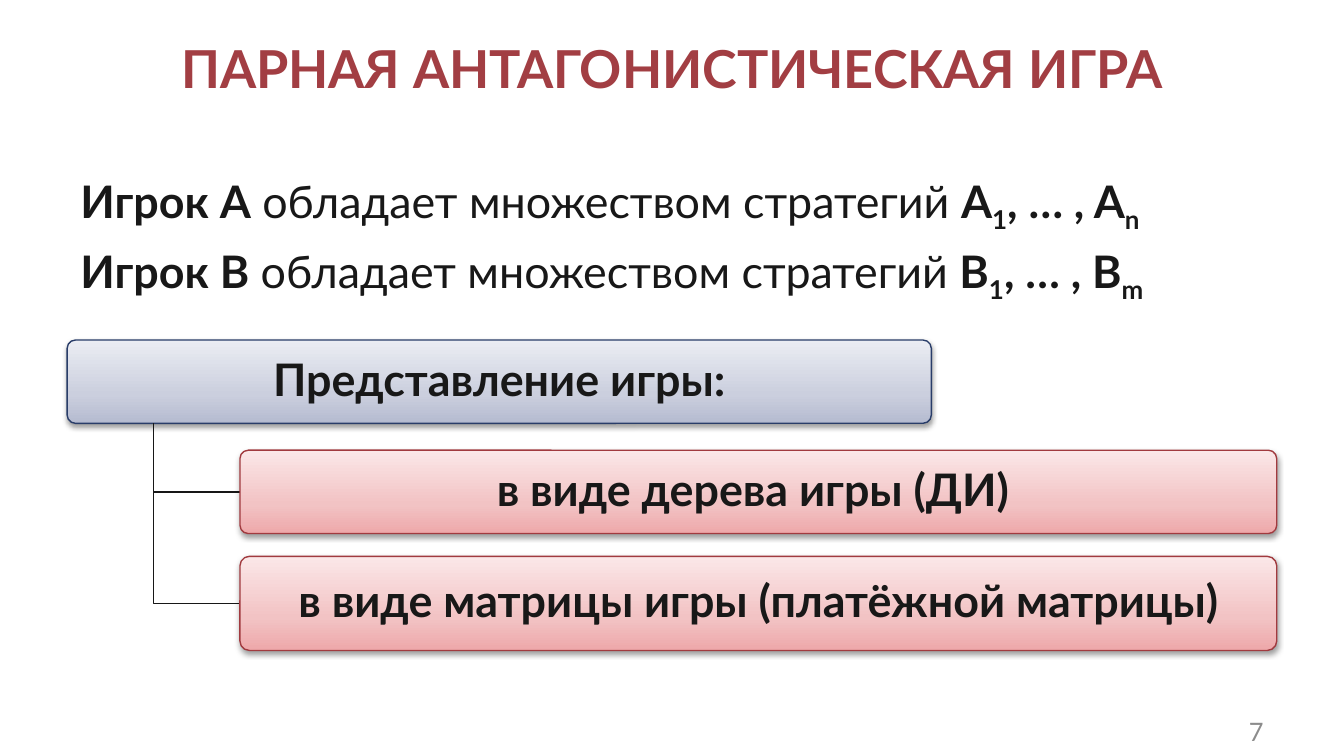
from dataclasses import dataclass
from lxml import etree
from pptx import Presentation
from pptx.dml.color import RGBColor
from pptx.enum.shapes import MSO_SHAPE
from pptx.enum.text import MSO_ANCHOR, PP_ALIGN
from pptx.oxml import parse_xml
from pptx.oxml.ns import nsdecls, qn
from pptx.util import Inches, Pt


@dataclass(frozen=True)
class Theme:
    font: str = "Lato"
    title: str = "A23E43"
    ink: str = "181818"
    gray: str = "8C8C8C"
    rule: str = "171717"
    # Outline, then the gradient stops from bottom to top
    blue: tuple = ("293D69", "B5BBD0", "CBCFDE", "EBEDF3")
    red: tuple = ("A13A3F", "EEA8AA", "F2C3C4", "FBE7E8")
    big: float = 28
    body: float = 24
    small: float = 13.6
    line: float = 0.75


T = Theme()


def add_run(para, text, size, color, bold=False, sub=False):
    run = para.add_run()
    run.text = text
    font = run.font
    font.name, font.size, font.bold = T.font, Pt(size), bold
    font.color.rgb = RGBColor.from_string(color)
    if sub:
        run._r.get_or_add_rPr().set("baseline", "-25000")


def add_text(slide, box, anchor):
    frame = slide.shapes.add_textbox(*map(Inches, box)).text_frame
    frame.word_wrap = True
    frame.vertical_anchor = anchor
    return frame


def add_label(slide, box, text, size, color, align, bold=False):
    para = add_text(slide, box, MSO_ANCHOR.MIDDLE).paragraphs[0]
    para.alignment = align
    add_run(para, text, size, color, bold)


def add_body(slide, box):
    frame = add_text(slide, box, MSO_ANCHOR.TOP)
    for i, (name, last) in enumerate((("A", "n"), ("B", "m"))):
        para = frame.add_paragraph() if i else frame.paragraphs[0]
        if i:
            para.space_before = Pt(4.8)
        for text, bold, sub in (
            (f"Игрок {name}", True, False),
            (" обладает множеством стратегий ", False, False),
            (name, True, False),
            ("1", True, True),
            (f", … , {name}", True, False),
            (last, True, True),
        ):
            add_run(para, text, T.body, T.ink, bold, sub)


def add_card(slide, box, text, tone):
    card = slide.shapes.add_shape(MSO_SHAPE.ROUNDED_RECTANGLE, *map(Inches, box))
    card.adjustments[0] = 0.1
    edge, *stops = tone
    card.line.color.rgb = RGBColor.from_string(edge)
    card.line.width = Pt(T.line)

    # Upward gradient
    props = card._element.spPr
    marks = "".join(
        f'<a:gs pos="{pos}000"><a:srgbClr val="{color}"/></a:gs>'
        for pos, color in zip((0, 35, 100), stops)
    )
    props.find(qn("a:prstGeom")).addnext(parse_xml(
        f'<a:gradFill {nsdecls("a")} rotWithShape="1"><a:gsLst>{marks}</a:gsLst>'
        '<a:lin ang="16200000" scaled="0"/></a:gradFill>'
    ))

    # Soft shadow below
    card.shadow.inherit = False
    shade = etree.SubElement(
        props.find(qn("a:effectLst")), qn("a:outerShdw"),
        blurRad=str(Pt(3.1)), dist=str(Pt(1.6)), dir="5400000", rotWithShape="0",
    )
    color = etree.SubElement(shade, qn("a:srgbClr"), val="000000")
    etree.SubElement(color, qn("a:alpha"), val="38000")

    frame = card.text_frame
    frame.word_wrap = True
    frame.vertical_anchor = MSO_ANCHOR.MIDDLE
    frame.margin_left = frame.margin_right = Inches(0.05)
    frame.margin_top = frame.margin_bottom = Inches(0.03)
    para = frame.paragraphs[0]
    para.alignment = PP_ALIGN.CENTER
    para.line_spacing = 0.9
    add_run(para, text, T.body, T.ink, True)


def add_elbow(slide, x, y, right, down):
    pen = slide.shapes.build_freeform(Inches(x), Inches(y))
    pen.add_line_segments(
        [(Inches(x), Inches(down)), (Inches(right), Inches(down))], close=False
    )
    elbow = pen.convert_to_shape()
    elbow.fill.background()
    elbow.shadow.inherit = False
    elbow.line.color.rgb = RGBColor.from_string(T.rule)
    elbow.line.width = Pt(T.line)


def add_tree(slide, box):
    x, y, w, h = box
    head, tall = 6.43, 0.62
    stem, left = x + head * 0.1, x + head * 0.2
    add_card(slide, (x, y, head, tall), "Представление игры:", T.blue)
    for text, drop, high in (
        ("в виде дерева игры (ДИ) ", 0.82, tall),
        ("в виде матрицы игры (платёжной матрицы)", h - 0.7, 0.7),
    ):
        add_elbow(slide, stem, y + tall, left, y + drop + high / 2)
        add_card(slide, (left, y + drop, x + w - left, high), text, T.red)


def main():
    deck = Presentation()
    # Widescreen, 16 to 9
    deck.slide_width = Inches(10)
    deck.slide_height = deck.slide_width * 9 // 16
    slide = deck.slides.add_slide(deck.slide_layouts[6])
    add_label(slide, (0.5, 0.15, 9, 0.7), "ПАРНАЯ АНТАГОНИСТИЧЕСКАЯ ИГРА",
              T.big, T.title, PP_ALIGN.CENTER, True)
    add_body(slide, (0.5, 1.24, 9, 3.86))
    add_tree(slide, (0.5, 2.53, 9, 2.31))
    add_label(slide, (8.94, 5.29, 0.56, 0.3), "7", T.small, T.gray, PP_ALIGN.RIGHT)
    deck.save("out.pptx")


if __name__ == "__main__":
    main()
